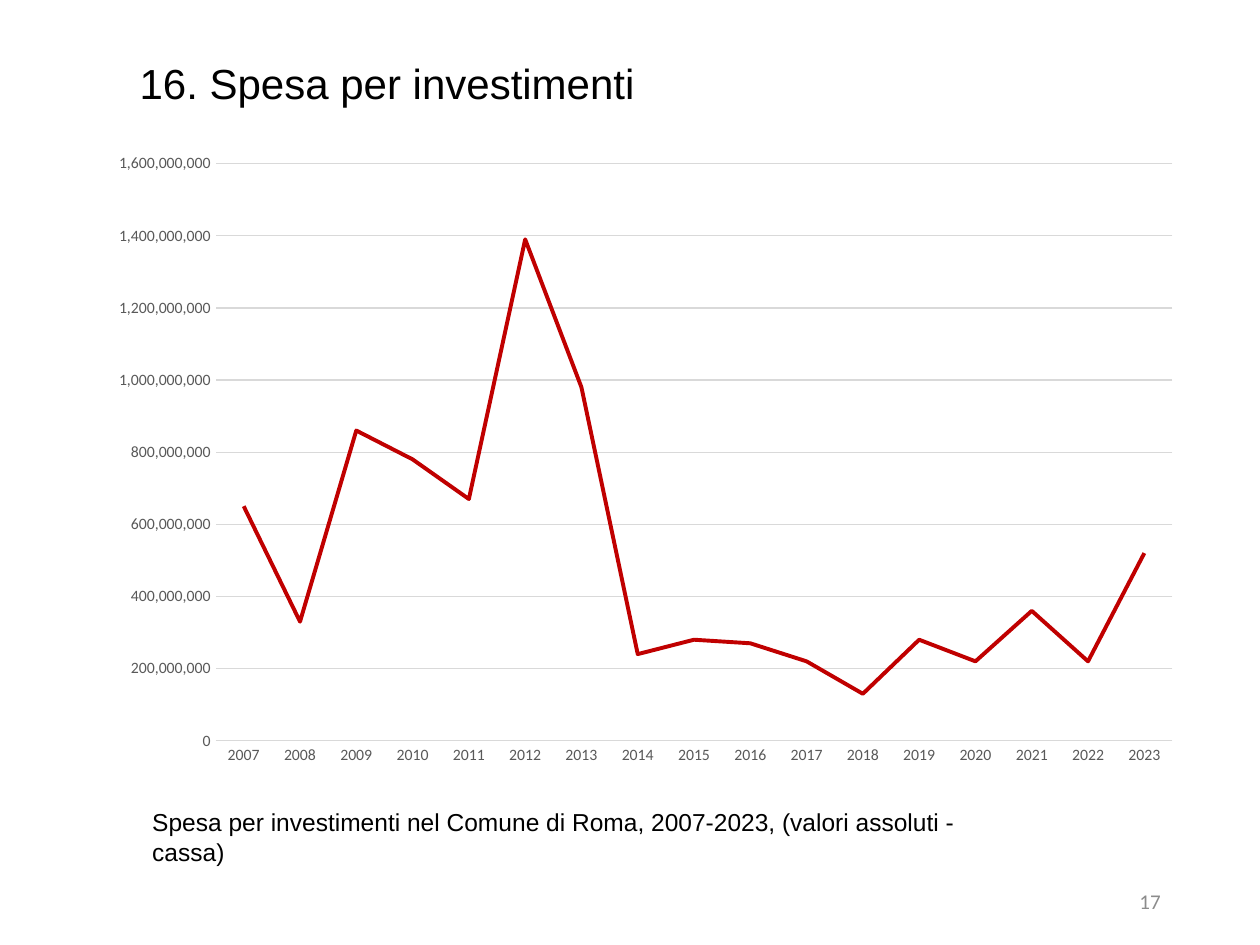
"""Build the slide on investment spending with its line chart."""
from dataclasses import dataclass

from pptx import Presentation
from pptx.chart.data import CategoryChartData
from pptx.dml.color import RGBColor
from pptx.enum.chart import XL_CHART_TYPE, XL_TICK_LABEL_POSITION, XL_TICK_MARK
from pptx.enum.text import MSO_ANCHOR, PP_ALIGN
from pptx.util import Inches, Pt

WIDTH, HEIGHT = 10, 7.5
COLORS = {
    "text": "000000",
    "number": "8C8C8C",
    "label": "595959",
    "grid": "D9D9D9",
    "line": "C00000",
}
FIRST_YEAR = 2007
SPENDING_MILLIONS = [650, 330, 860, 780, 670, 1390, 980, 240, 280,
                     270, 220, 130, 280, 220, 360, 220, 520]


@dataclass(frozen=True)
class Area:
    left: float
    top: float
    width: float
    height: float

    def lengths(self) -> tuple:
        return (Inches(self.left * WIDTH), Inches(self.top * HEIGHT),
                Inches(self.width * WIDTH), Inches(self.height * HEIGHT))


@dataclass(frozen=True)
class Label:
    text: str
    area: Area
    size: int
    font: str = "Arial"
    color: str = "text"
    align: PP_ALIGN = PP_ALIGN.LEFT
    anchor: MSO_ANCHOR = MSO_ANCHOR.TOP
    spacing: float = 1.0


CHART_AREA = Area(0.077, 0.15, 0.871, 0.672)
LABELS = [
    Label("16. Spesa per investimenti", Area(0.101, 0.06, 0.801, 0.079), 24,
          spacing=0.9),
    Label("Spesa per investimenti nel Comune di Roma, 2007-2023, "
          "(valori assoluti - cassa)", Area(0.111, 0.848, 0.696, 0.076), 14),
    Label("17", Area(0.706, 0.927, 0.225, 0.053), 12, "Calibri", "number",
          PP_ALIGN.RIGHT, MSO_ANCHOR.MIDDLE),
]


def color(name: str) -> RGBColor:
    return RGBColor.from_string(COLORS[name])


def style_font(font, family: str, size: int, color_name: str) -> None:
    font.name = family
    font.size = Pt(size)
    font.color.rgb = color(color_name)


def style_line(line, color_name: str, width: float) -> None:
    line.color.rgb = color(color_name)
    line.width = Pt(width)


def draw_label(page, label: Label) -> None:
    frame = page.shapes.add_textbox(*label.area.lengths()).text_frame
    frame.word_wrap = True
    frame.vertical_anchor = label.anchor
    para = frame.paragraphs[0]
    para.text = label.text
    para.alignment = label.align
    para.line_spacing = label.spacing
    style_font(para.font, label.font, label.size, label.color)


def draw_chart(page) -> None:
    data = CategoryChartData(number_format="#,##0")
    data.categories = [str(FIRST_YEAR + index)
                       for index in range(len(SPENDING_MILLIONS))]
    data.add_series("Spesa per investimenti",
                    [value * 1_000_000 for value in SPENDING_MILLIONS])
    chart = page.shapes.add_chart(
        XL_CHART_TYPE.LINE, *CHART_AREA.lengths(), data).chart
    chart.has_legend = False
    chart.has_title = False
    style_font(chart.font, "Calibri", 10, "text")

    for axis in (chart.category_axis, chart.value_axis):
        axis.major_tick_mark = XL_TICK_MARK.NONE
        axis.minor_tick_mark = XL_TICK_MARK.NONE
        axis.tick_label_position = XL_TICK_LABEL_POSITION.NEXT_TO_AXIS
        style_font(axis.tick_labels.font, "Calibri", 9, "label")
    style_line(chart.category_axis.format.line, "grid", 0.75)

    values = chart.value_axis
    values.minimum_scale = 0
    values.maximum_scale = 1_600_000_000
    values.major_unit = 200_000_000
    values.tick_labels.number_format = "#,##0"
    values.tick_labels.number_format_is_linked = False
    values.format.line.fill.background()
    style_line(values.major_gridlines.format.line, "grid", 0.75)

    plot = chart.plots[0]
    plot.vary_by_categories = False
    series = plot.series[0]
    series.smooth = False
    style_line(series.format.line, "line", 2.25)


def main() -> None:
    deck = Presentation()
    deck.slide_width, deck.slide_height = Inches(WIDTH), Inches(HEIGHT)
    page = deck.slides.add_slide(deck.slide_layouts[6])
    draw_chart(page)
    for label in LABELS:
        draw_label(page, label)
    deck.save("out.pptx")


if __name__ == "__main__":
    main()
